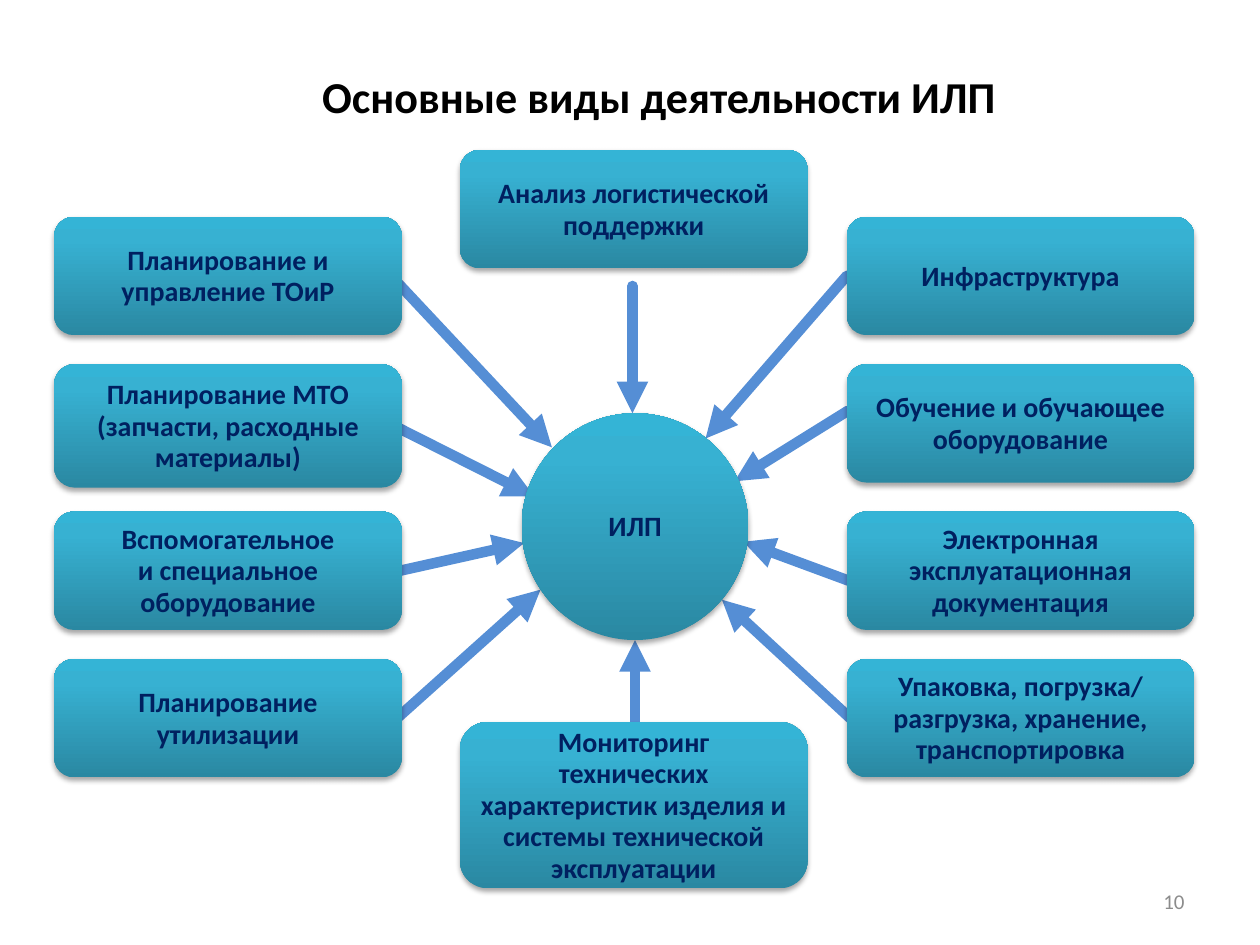
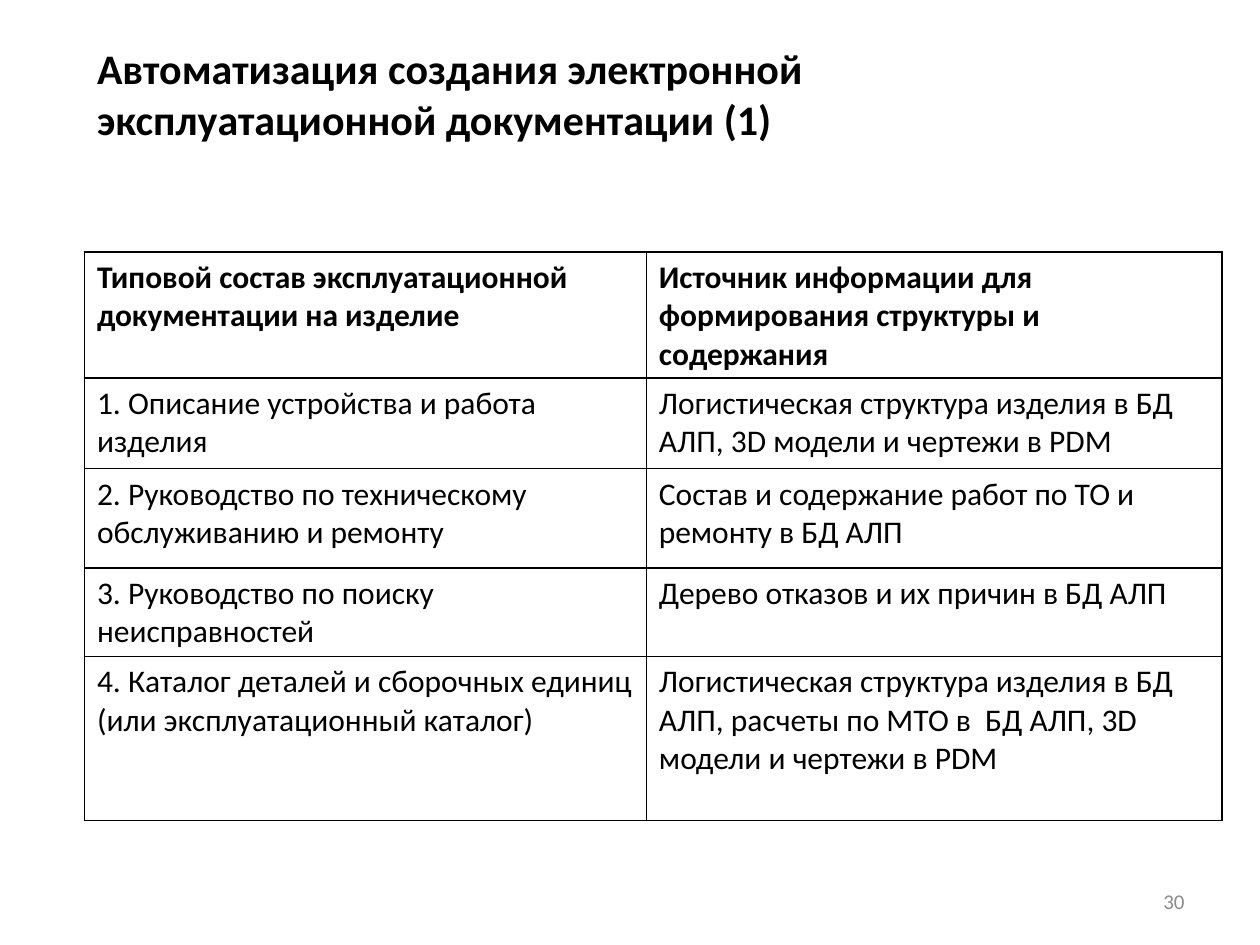
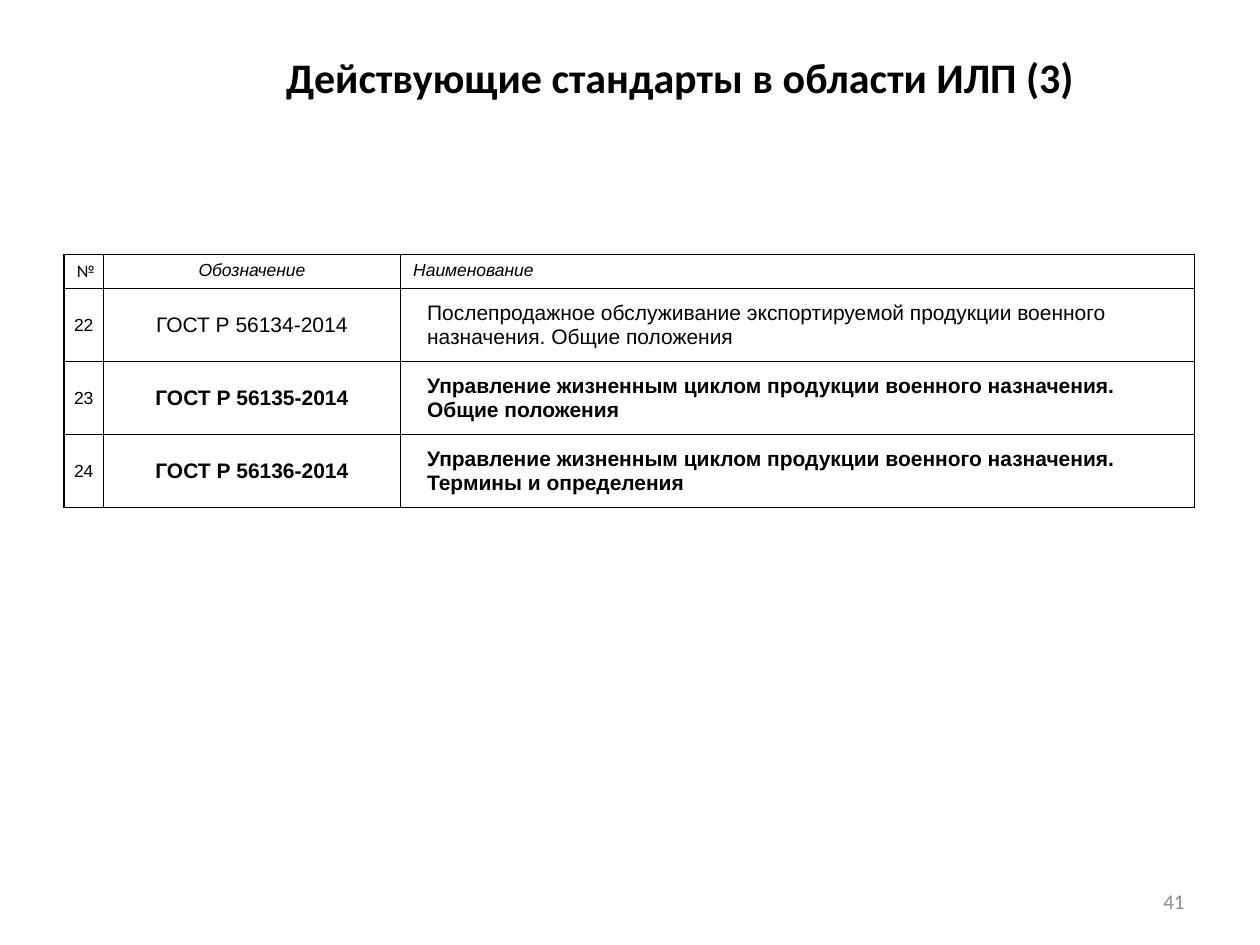
from copy import deepcopy
from dataclasses import dataclass
from typing import NamedTuple, Optional

from lxml.etree import SubElement
from pptx import Presentation
from pptx.dml.color import RGBColor
from pptx.enum.shapes import MSO_CONNECTOR, MSO_SHAPE
from pptx.enum.text import MSO_ANCHOR, MSO_AUTO_SIZE, PP_ALIGN
from pptx.oxml.ns import qn
from pptx.util import Inches, Pt

# Shared look
BLACK = "000000"
NAVY = "002060"
ARROW_BLUE = "558ED5"
NUMBER_GREY = "8C8C8C"
BOX_GRADIENT = ((0, "2A88A2"), (0.8, "37B1D2"), (1, "34B4D6"))
TITLE_ONLY_LAYOUT = 5
LEFT_SIDE = 1


class Area(NamedTuple):
    left: float
    top: float
    width: float
    height: float

    def lengths(self) -> list:
        return [Inches(value) for value in self]


class Point(NamedTuple):
    x: float
    y: float


@dataclass(frozen=True)
class TextStyle:
    size: float
    color: str = BLACK
    bold: bool = False
    italic: bool = False
    font: str = "Calibri"
    align: PP_ALIGN = PP_ALIGN.LEFT
    line_points: Optional[float] = None


@dataclass(frozen=True)
class CellStyle:
    text: TextStyle
    anchor: MSO_ANCHOR = MSO_ANCHOR.TOP
    side_inset: float = 0.1
    end_inset: float = 0.05


@dataclass(frozen=True)
class Activity:
    text: str
    area: Area
    arrow_start: Point
    arrow_end: Point
    joined_side: Optional[int] = None


BOX_TEXT = TextStyle(16, NAVY, bold=True, align=PP_ALIGN.CENTER, line_points=18)
NUMBER_TEXT = TextStyle(12, NUMBER_GREY, align=PP_ALIGN.RIGHT)
TITLE_TEXT = TextStyle(24, bold=True)
DIAGRAM_TITLE_TEXT = TextStyle(25.2, bold=True, align=PP_ALIGN.CENTER, line_points=48)

# Activities around the hub
HUB = Area(4.14, 3.28, 1.8, 1.8)
BOX_WIDTH, BOX_HEIGHT = 2.76, 0.94
LEFT_COLUMN, MIDDLE_COLUMN, RIGHT_COLUMN = 0.43, 3.65, 6.72


def column_box(left: float, row: int, height: float = BOX_HEIGHT) -> Area:
    return Area(left, 1.72 + 1.17 * row, BOX_WIDTH, height)


ACTIVITIES = [
    Activity("Планирование и управление ТОиР", column_box(LEFT_COLUMN, 0),
             Point(2.88, 1.95), Point(4.38, 3.55)),
    Activity("Планирование МТО\n(запчасти, расходные материалы)",
             column_box(LEFT_COLUMN, 1, 0.98), Point(3.09, 3.36), Point(4.24, 3.94)),
    Activity("Вспомогательное\nи специальное оборудование", column_box(LEFT_COLUMN, 2),
             Point(2.95, 4.58), Point(4.16, 4.31)),
    Activity("Планирование утилизации", column_box(LEFT_COLUMN, 3),
             Point(2.94, 5.89), Point(4.29, 4.68)),
    Activity("Анализ логистической поддержки",
             Area(MIDDLE_COLUMN, 1.19, BOX_WIDTH, BOX_HEIGHT),
             Point(5.02, 2.27), Point(5.02, 3.28)),
    Activity("Мониторинг технических характеристик изделия и системы "
             "технической эксплуатации", Area(MIDDLE_COLUMN, 5.73, BOX_WIDTH, 1.32),
             Point(5.04, 6.1), Point(5.04, 5.08)),
    Activity("Инфраструктура", column_box(RIGHT_COLUMN, 0),
             Point(6.72, 2.18), Point(5.6, 3.48), LEFT_SIDE),
    Activity("Обучение и обучающее оборудование", column_box(RIGHT_COLUMN, 1),
             Point(6.73, 3.26), Point(5.83, 3.82)),
    Activity("Электронная эксплуатационная документация", column_box(RIGHT_COLUMN, 2),
             Point(6.82, 4.64), Point(5.9, 4.3)),
    Activity("Упаковка, погрузка/\nразгрузка, хранение, транспортировка",
             column_box(RIGHT_COLUMN, 3), Point(6.78, 5.73), Point(5.73, 4.76)),
]

# Table contents
DOCUMENT_ROWS = [
    ("Типовой состав эксплуатационной документации на изделие",
     "Источник информации для формирования структуры и содержания"),
    ("1. Описание устройства и работа изделия",
     "Логистическая структура изделия в БД АЛП, 3D модели и чертежи в PDM"),
    ("2. Руководство по техническому обслуживанию и ремонту",
     "Состав и содержание работ по ТО и ремонту в БД АЛП"),
    ("3. Руководство по поиску неисправностей",
     "Дерево отказов и их причин в БД АЛП"),
    ("4. Каталог деталей и сборочных единиц (или эксплуатационный каталог)",
     "Логистическая структура изделия в БД АЛП, расчеты по МТО в  БД АЛП, "
     "3D модели и чертежи в PDM"),
]
STANDARD_ROWS = [
    ("№", "Обозначение", "Наименование"),
    ("22", "ГОСТ Р 56134-2014",
     "Послепродажное обслуживание экспортируемой продукции военного назначения. "
     "Общие положения"),
    ("23", "ГОСТ Р 56135-2014",
     "Управление жизненным циклом продукции военного назначения. Общие положения"),
    ("24", "ГОСТ Р 56136-2014",
     "Управление жизненным циклом продукции военного назначения. Термины и определения"),
]


def rgb(color: str) -> RGBColor:
    return RGBColor.from_string(color)


def write_text(text_frame, text: str, style: TextStyle) -> None:
    paragraph = text_frame.paragraphs[0]
    paragraph.alignment = style.align
    if style.line_points:
        paragraph.line_spacing = Pt(style.line_points)
    for index, line in enumerate(text.split("\n")):
        if index:
            paragraph.add_line_break()
        run = paragraph.add_run()
        run.text = line
        run.font.name = style.font
        run.font.size = Pt(style.size)
        run.font.bold = style.bold
        run.font.italic = style.italic
        run.font.color.rgb = rgb(style.color)


def add_slide(presentation, title: str, title_area: Area, number: int,
              style: TextStyle = TITLE_TEXT, anchor: MSO_ANCHOR = MSO_ANCHOR.TOP):
    """Add a slide with its title and page number."""
    slide = presentation.slides.add_slide(presentation.slide_layouts[TITLE_ONLY_LAYOUT])
    shape = slide.shapes.title
    shape.left, shape.top, shape.width, shape.height = title_area.lengths()
    shape.text_frame.auto_size = MSO_AUTO_SIZE.NONE
    shape.text_frame.vertical_anchor = anchor
    write_text(shape.text_frame, title, style)

    number_box = slide.shapes.add_textbox(*Area(7.17, 6.95, 2.33, 0.4).lengths())
    number_box.text_frame.word_wrap = True
    number_box.text_frame.vertical_anchor = MSO_ANCHOR.MIDDLE
    write_text(number_box.text_frame, str(number), NUMBER_TEXT)
    return slide


def add_arrow(slide, start: Point, end: Point):
    connector = slide.shapes.add_connector(
        MSO_CONNECTOR.STRAIGHT, *[Inches(value) for value in (*start, *end)])
    connector.line.color.rgb = rgb(ARROW_BLUE)
    connector.line.width = Pt(6)
    line = connector.line._get_or_add_ln()
    line.set("cap", "rnd")
    SubElement(line, qn("a:tailEnd"), type="triangle")
    SubElement(connector._element.spPr, qn("a:effectLst"))
    return connector


def add_gradient_shape(slide, kind: MSO_SHAPE, area: Area, text: str):
    shape = slide.shapes.add_shape(kind, *area.lengths())
    shape.line.fill.background()
    # Three-stop gradient running upwards
    shape.fill.gradient()
    shape.fill.gradient_angle = 90
    properties = shape._element.spPr
    stop_list = properties.find(".//" + qn("a:gsLst"))
    stop_list.append(deepcopy(stop_list[-1]))
    for stop, (position, color) in zip(shape.fill.gradient_stops, BOX_GRADIENT):
        stop.position = position
        stop.color.rgb = rgb(color)
    # Soft shadow below
    shape.shadow.inherit = False
    shadow = SubElement(properties.find(qn("a:effectLst")), qn("a:outerShdw"),
                        blurRad=str(Pt(3.1)), dist=str(Pt(1.8)), dir="5400000",
                        rotWithShape="0")
    shadow_color = SubElement(shadow, qn("a:srgbClr"), val=BLACK)
    SubElement(shadow_color, qn("a:alpha"), val="35000")

    shape.text_frame.word_wrap = True
    shape.text_frame.vertical_anchor = MSO_ANCHOR.MIDDLE
    write_text(shape.text_frame, text, BOX_TEXT)
    return shape


def set_borders(cell) -> None:
    properties = cell._tc.get_or_add_tcPr()
    for index, side in enumerate(("lnL", "lnR", "lnT", "lnB")):
        border = SubElement(properties, qn(f"a:{side}"), w=str(Pt(1)))
        fill = SubElement(border, qn("a:solidFill"))
        SubElement(fill, qn("a:srgbClr"), val=BLACK)
        properties.insert(index, border)


def add_grid(slide, left: float, top: float, columns: list[float], heights: list[float],
             rows: list[tuple], styles: list[list[CellStyle]]) -> None:
    area = Area(left, top, sum(columns), sum(heights))
    table = slide.shapes.add_table(len(rows), len(columns), *area.lengths()).table
    table.first_row = table.horz_banding = False
    for column, width in zip(table.columns, columns):
        column.width = Inches(width)
    for row, height, texts, row_styles in zip(table.rows, heights, rows, styles):
        row.height = Inches(height)
        for cell, text, style in zip(row.cells, texts, row_styles):
            cell.fill.background()
            set_borders(cell)
            cell.vertical_anchor = style.anchor
            cell.margin_left = cell.margin_right = Inches(style.side_inset)
            cell.margin_top = cell.margin_bottom = Inches(style.end_inset)
            write_text(cell.text_frame, text, style.text)


def build_activities(presentation) -> None:
    slide = add_slide(presentation, "Основные виды деятельности ИЛП ",
                      Area(1.3, 0.29, 7.94, 0.7), 10, DIAGRAM_TITLE_TEXT,
                      MSO_ANCHOR.MIDDLE)
    # Arrows lie behind the boxes
    arrows = [add_arrow(slide, activity.arrow_start, activity.arrow_end)
              for activity in ACTIVITIES]
    add_gradient_shape(slide, MSO_SHAPE.OVAL, HUB, "ИЛП")
    for activity, arrow in zip(ACTIVITIES, arrows):
        box = add_gradient_shape(slide, MSO_SHAPE.ROUNDED_RECTANGLE,
                                 activity.area, activity.text)
        if activity.joined_side is not None:
            arrow.begin_connect(box, activity.joined_side)


def build_documentation(presentation) -> None:
    slide = add_slide(
        presentation,
        "Автоматизация создания электронной эксплуатационной документации (1)",
        Area(0.67, 0.29, 6.54, 0.91), 30)
    header = CellStyle(TextStyle(18, bold=True))
    body = CellStyle(TextStyle(18))
    styles = [[header] * 2] + [[body] * 2] * (len(DOCUMENT_ROWS) - 1)
    add_grid(slide, 0.67, 2, [4.46, 4.57], [1, 0.72, 0.79, 0.7, 1.3],
             DOCUMENT_ROWS, styles)


def standard_styles(bold: bool) -> list[CellStyle]:
    number = TextStyle(10, font="Arial", align=PP_ALIGN.CENTER)
    code = TextStyle(12, bold=bold, font="Arial", align=PP_ALIGN.CENTER)
    name = TextStyle(12, bold=bold, font="Arial")
    return [CellStyle(number, MSO_ANCHOR.MIDDLE, 0.01, 0.01),
            CellStyle(code, MSO_ANCHOR.MIDDLE, 0.21, 0.09),
            CellStyle(name, MSO_ANCHOR.MIDDLE, 0.21, 0.09)]


def build_standards(presentation) -> None:
    slide = add_slide(presentation, "Действующие стандарты в области ИЛП (3)",
                      Area(2.17, 0.36, 6.54, 0.5), 41,
                      TextStyle(24, bold=True, align=PP_ALIGN.JUSTIFY))
    header = [CellStyle(TextStyle(10, align=PP_ALIGN.CENTER)),
              CellStyle(TextStyle(10, italic=True, font="Arial", align=PP_ALIGN.CENTER)),
              CellStyle(TextStyle(10, italic=True, font="Arial"))]
    styles = [header] + [standard_styles(bold) for bold in (False, True, True)]
    add_grid(slide, 0.51, 2.02, [0.31, 2.36, 6.3], [0.27] + [0.56] * 3,
             STANDARD_ROWS, styles)


def main() -> None:
    presentation = Presentation()
    presentation.slide_width = Inches(10)
    presentation.slide_height = Inches(7.5)
    build_activities(presentation)
    build_documentation(presentation)
    build_standards(presentation)
    presentation.save("out.pptx")


if __name__ == "__main__":
    main()
